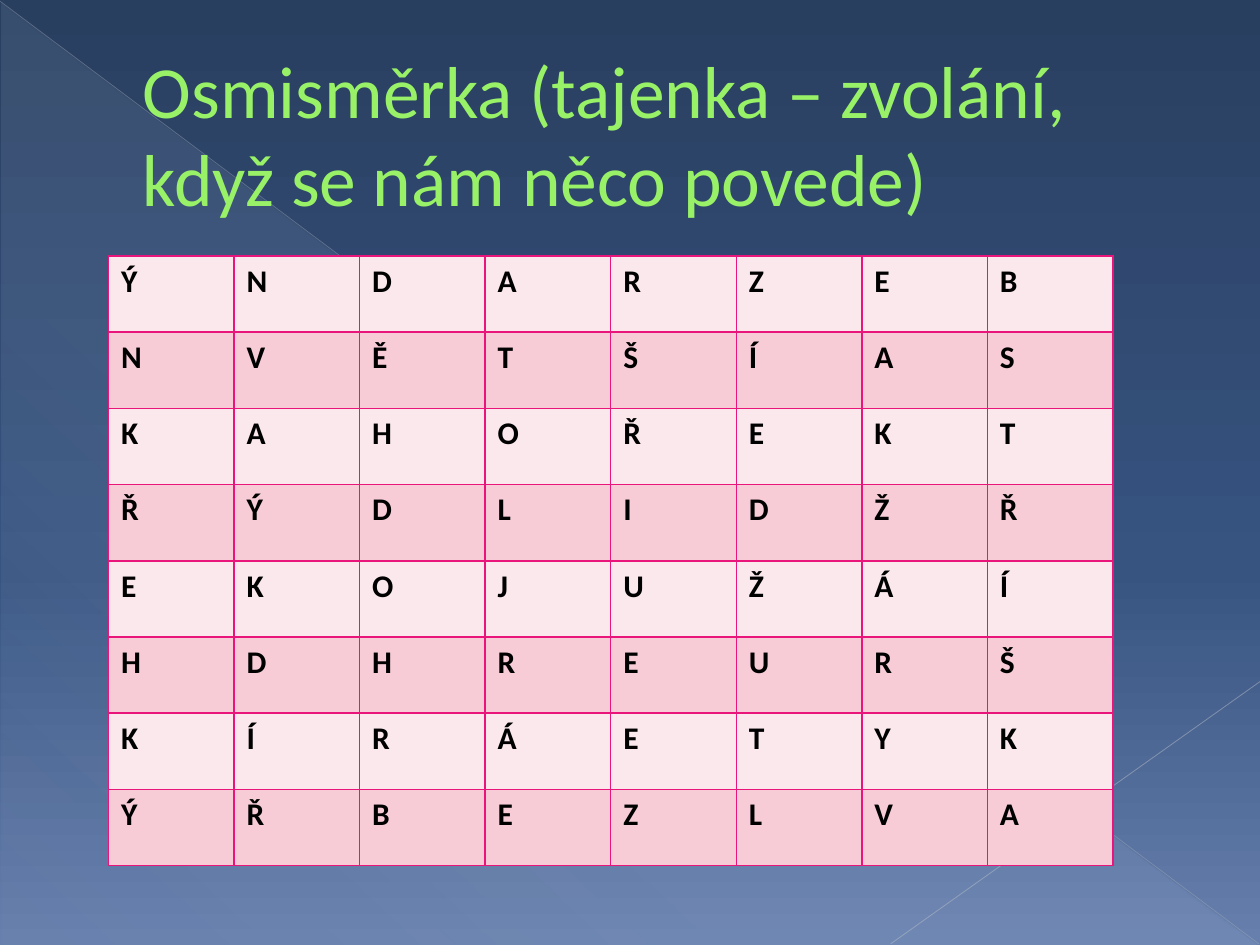
import pptx
import pptx.util
import pptx.dml.color
import pptx.enum.shapes
import pptx.enum.text
import pptx.oxml
import pptx.oxml.ns

Pt = pptx.util.Pt
qn = pptx.oxml.ns.qn
NS = pptx.oxml.ns.nsdecls("a")

HEAD = "Osmisměrka (tajenka – zvolání, když se nám něco povede)"
GRID = ["ÝNDARZEB", "NVĚTŠÍAS", "KAHOŘEKT", "ŘÝDLIDŽŘ",
        "EKOJUŽÁÍ", "HDHREURŠ", "KÍRÁETYK", "ÝŘBEZLVA"]
BANDS = ["FBE8EC", "F7CCD7"]
EDGE = "EA157A"
SKY = [(0, "293F60", 100), (60, "375380", 100), (100, "667FAC", 100)]
GLOW = [(0, "D6ECFF", 10), (70, "D6ECFF", 8), (100, "D6ECFF", 1)]
LINES = [((0, 0.7), (719.3, 539.3), "B7BCC5", 0.39, 35),
         ((720, 389.5), (509, 539.3), "BFC3CB", 0.47, 45)]
BODY = {"name": "Calibri", "size": Pt(18), "bold": True}
TITLE = {"name": "Calibri", "size": Pt(42), "bold": False}
LEFT, TOP, WIDE, HIGH = 62, 146.3, 574, 348.5


def rgb(code):
    return pptx.dml.color.RGBColor.from_string(code)


def style(font, look, code):
    for key, val in look.items():
        setattr(font, key, val)
    font.color.rgb = rgb(code)


def tint(code, alpha):
    return f'<a:srgbClr val="{code}"><a:alpha val="{alpha * 1000}"/></a:srgbClr>'


def blend(fill, root, stops, angle):
    fill.solid()
    old = next(root.iter(qn("a:solidFill")))
    marks = "".join(f'<a:gs pos="{pos * 1000}">{tint(code, alpha)}</a:gs>'
                    for pos, code, alpha in stops)
    new = pptx.oxml.parse_xml(
        f'<a:gradFill {NS} rotWithShape="1"><a:gsLst>{marks}</a:gsLst>'
        f'<a:lin ang="{angle * 60000}" scaled="0"/></a:gradFill>')
    old.getparent().replace(old, new)


def stroke(tag, code, width, alpha=100):
    return pptx.oxml.parse_xml(
        f'<a:{tag} {NS} w="{Pt(width)}"><a:solidFill>{tint(code, alpha)}'
        f'</a:solidFill><a:prstDash val="solid"/></a:{tag}>')


def backdrop(slide):
    blend(slide.background.fill, slide.element, SKY, 90)
    glow = slide.shapes.add_shape(
        pptx.enum.shapes.MSO_SHAPE.RIGHT_TRIANGLE,
        Pt(0.7), Pt(1.4), Pt(718.6), Pt(538.6))
    glow.shadow.inherit = False
    glow.line.fill.background()
    blend(glow.fill, glow.element, GLOW, 133)
    for start, end, code, width, alpha in LINES:
        line = slide.shapes.add_connector(
            pptx.enum.shapes.MSO_CONNECTOR.STRAIGHT,
            *map(Pt, start + end))
        props = line.element.spPr
        props.append(stroke("ln", code, width, alpha))
        props.append(pptx.oxml.parse_xml(f"<a:effectLst {NS}/>"))


def heading(slide):
    title = slide.shapes.title
    title.element.getparent().append(title.element)
    box = {"left": Pt(36), "top": Pt(21), "width": Pt(648), "height": Pt(110)}
    for key, val in box.items():
        setattr(title, key, val)
    frame = title.text_frame
    frame.text = HEAD
    frame.auto_size = pptx.enum.text.MSO_AUTO_SIZE.NONE
    frame.vertical_anchor = pptx.enum.text.MSO_ANCHOR.MIDDLE
    para = frame.paragraphs[0]
    para.alignment = pptx.enum.text.PP_ALIGN.LEFT
    props = para._p.get_or_add_pPr()
    props.set("marL", str(Pt(38.4)))
    props.set("indent", "0")
    font = para.runs[0].font
    style(font, TITLE, "98F167")
    para.runs[0]._r.get_or_add_rPr().insert(0, stroke("ln", "589129", 0.5))


def puzzle(slide):
    rows, cols = len(GRID), len(GRID[0])
    table = slide.shapes.add_table(
        rows, cols, Pt(LEFT), Pt(TOP), Pt(WIDE), Pt(HIGH)).table
    table.first_row = table.horz_banding = False
    for col in table.columns:
        col.width = Pt(WIDE / cols)
    for r, word in enumerate(GRID):
        table.rows[r].height = Pt(HIGH / rows)
        for c, char in enumerate(word):
            cell = table.cell(r, c)
            cell.text = char
            style(cell.text_frame.paragraphs[0].runs[0].font, BODY, "000000")
            props = cell._tc.get_or_add_tcPr()
            for tag in ("lnL", "lnR", "lnT", "lnB"):
                props.append(stroke(tag, EDGE, 1))
            cell.fill.solid()
            cell.fill.fore_color.rgb = rgb(BANDS[r % 2])


def main():
    deck = pptx.Presentation()
    deck.slide_width, deck.slide_height = Pt(720), Pt(540)
    slide = deck.slides.add_slide(deck.slide_layouts[5])
    backdrop(slide)
    heading(slide)
    puzzle(slide)
    deck.save("out.pptx")


if __name__ == "__main__":
    main()
